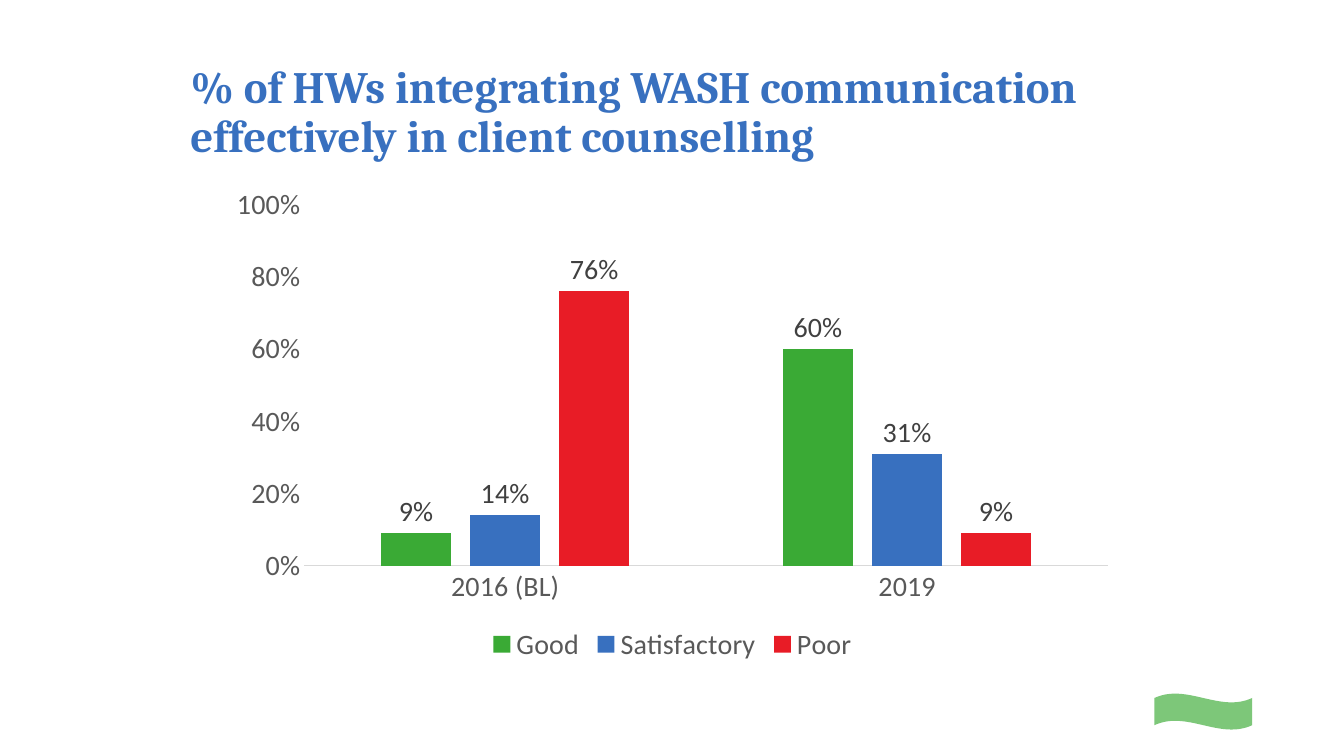
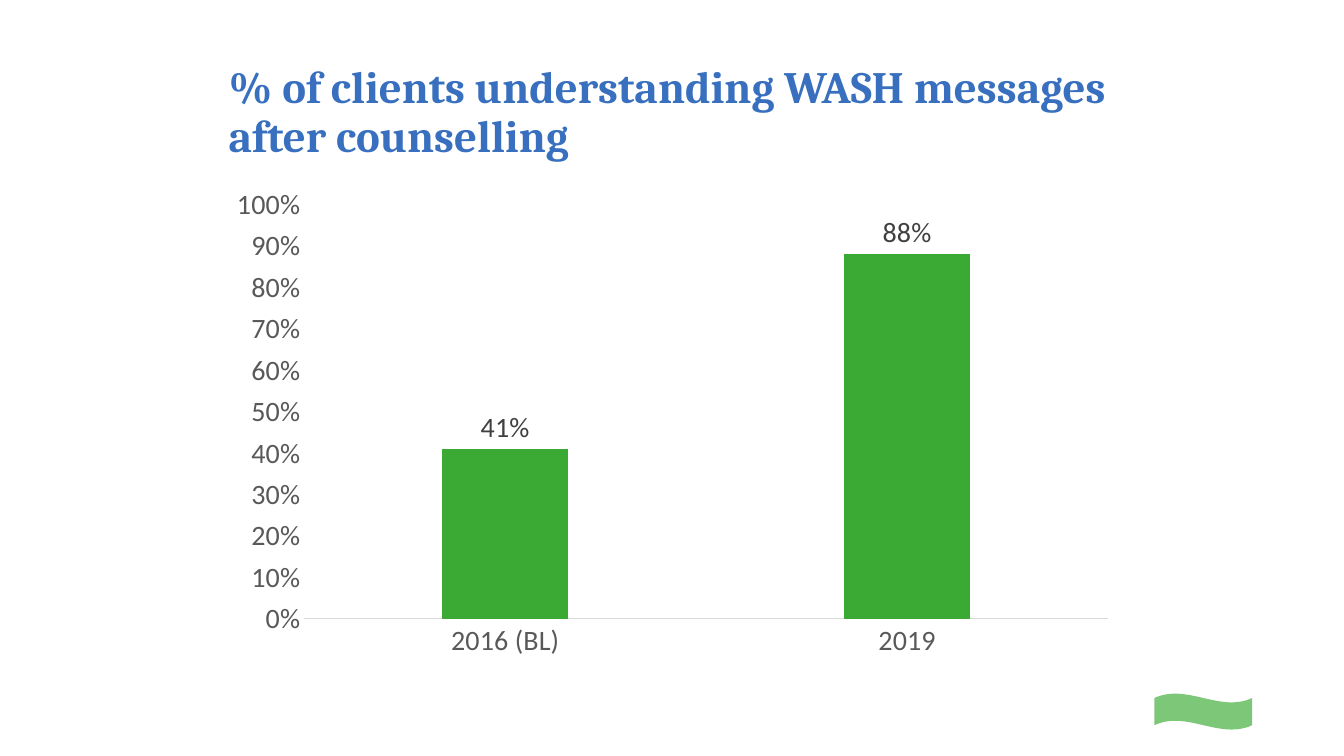
from lxml.etree import SubElement
from pptx import Presentation
from pptx.chart.data import CategoryChartData
from pptx.dml.color import RGBColor
from pptx.enum.chart import XL_CHART_TYPE, XL_LABEL_POSITION, XL_LEGEND_POSITION, XL_TICK_MARK
from pptx.enum.shapes import MSO_SHAPE
from pptx.enum.text import MSO_ANCHOR
from pptx.oxml.ns import qn
from pptx.util import Inches, Pt

COLORS = {
    "green": "3AAA35",
    "blue": "3870BF",
    "red": "E81C26",
    "axis_text": "595959",
    "label_text": "404040",
    "axis_line": "D9D9D9",
}
TITLE_FORMAT = {"name": "Cambria", "size": Pt(32), "bold": True}
CHART_FORMAT = {"name": "Calibri", "size": Pt(20), "bold": False}
PERCENT = "0%"
YEARS = ["2016 (BL)", "2019"]


def color(name):
    return RGBColor.from_string(COLORS[name])


def set_attributes(target, values):
    for name, value in values.items():
        setattr(target, name, value)


def style_font(font, values, color_name):
    set_attributes(font, values)
    font.color.rgb = color(color_name)


class ResultsDeck:
    """Holds the shared style and the slide being built."""

    def __init__(self):
        self.deck = Presentation()
        self.deck.slide_width = Inches(13.33)
        self.deck.slide_height = Inches(7.5)
        self.page = None

    def add_page(self):
        self.page = self.deck.slides.add_slide(self.deck.slide_layouts[6])
        self.add_corner_wave()

    def add_corner_wave(self):
        wave = self.page.shapes.add_shape(
            MSO_SHAPE.WAVE, Inches(11.45), Inches(6.88), Inches(0.97), Inches(0.36))
        wave.shadow.inherit = False
        wave.line.fill.background()
        wave.fill.solid()
        wave.fill.fore_color.rgb = color("green")
        fill_color = wave.fill._xPr.find(".//" + qn("a:srgbClr"))
        SubElement(fill_color, qn("a:alpha")).set("val", "66000")

    def add_title(self, text, left, width):
        box = self.page.shapes.add_textbox(
            Inches(left), Inches(0.4), Inches(width), Inches(1.45))
        frame = box.text_frame
        set_attributes(frame, {"word_wrap": True, "vertical_anchor": MSO_ANCHOR.MIDDLE})
        para = frame.paragraphs[0]
        para.line_spacing = 0.9
        span = para.add_run()
        span.text = text
        style_font(span.font, TITLE_FORMAT, "blue")

    def add_column_chart(self, series, axis_step, has_legend=False):
        """Draw clustered columns; series rows are (name, values, color name)."""
        data = CategoryChartData(number_format=PERCENT)
        data.categories = YEARS
        for name, values, _ in series:
            data.add_series(name, values)
        chart = self.page.shapes.add_chart(
            XL_CHART_TYPE.COLUMN_CLUSTERED, Inches(2.17), Inches(1.76),
            Inches(9), Inches(4.86), data).chart
        set_attributes(chart, {"has_title": False, "has_legend": has_legend})
        style_font(chart.font, CHART_FORMAT, "axis_text")
        if has_legend:
            set_attributes(chart.legend, {
                "position": XL_LEGEND_POSITION.BOTTOM, "include_in_layout": False})
            style_font(chart.legend.font, CHART_FORMAT, "axis_text")
        self.style_axes(chart, axis_step)
        plot = chart.plots[0]
        set_attributes(plot, {"gap_width": 219, "overlap": -27, "vary_by_categories": False})
        for columns, (_, _, color_name) in zip(plot.series, series):
            self.style_columns(columns, color_name)

    def style_axes(self, chart, axis_step):
        for axis in (chart.category_axis, chart.value_axis):
            set_attributes(axis, {
                "major_tick_mark": XL_TICK_MARK.NONE,
                "minor_tick_mark": XL_TICK_MARK.NONE,
                "has_major_gridlines": False,
            })
            style_font(axis.tick_labels.font, CHART_FORMAT, "axis_text")
        base_line = chart.category_axis.format.line
        base_line.color.rgb = color("axis_line")
        base_line.width = Pt(0.75)
        value_axis = chart.value_axis
        value_axis.format.line.fill.background()
        set_attributes(value_axis, {
            "minimum_scale": 0, "maximum_scale": 1, "major_unit": axis_step})
        set_attributes(value_axis.tick_labels, {
            "number_format": PERCENT, "number_format_is_linked": False})

    def style_columns(self, columns, color_name):
        columns.format.fill.solid()
        columns.format.fill.fore_color.rgb = color(color_name)
        columns.invert_if_negative = False
        labels = columns.data_labels
        set_attributes(labels, {
            "show_value": True,
            "position": XL_LABEL_POSITION.OUTSIDE_END,
            "number_format": PERCENT,
            "number_format_is_linked": False,
        })
        style_font(labels.font, CHART_FORMAT, "label_text")


def main():
    results = ResultsDeck()

    results.add_page()
    results.add_title(
        "% of HWs integrating WASH communication effectively in client counselling",
        left=1.79, width=10.63)
    results.add_column_chart([
        ("Good", (0.09, 0.6), "green"),
        ("Satisfactory", (0.14, 0.31), "blue"),
        ("Poor", (0.76, 0.09), "red"),
    ], axis_step=0.2, has_legend=True)

    results.add_page()
    results.add_title(
        "% of clients understanding WASH messages after counselling",
        left=2.17, width=9.16)
    results.add_column_chart([("Series 1", (0.41, 0.88), "green")], axis_step=0.1)

    results.deck.save("out.pptx")


if __name__ == "__main__":
    main()
